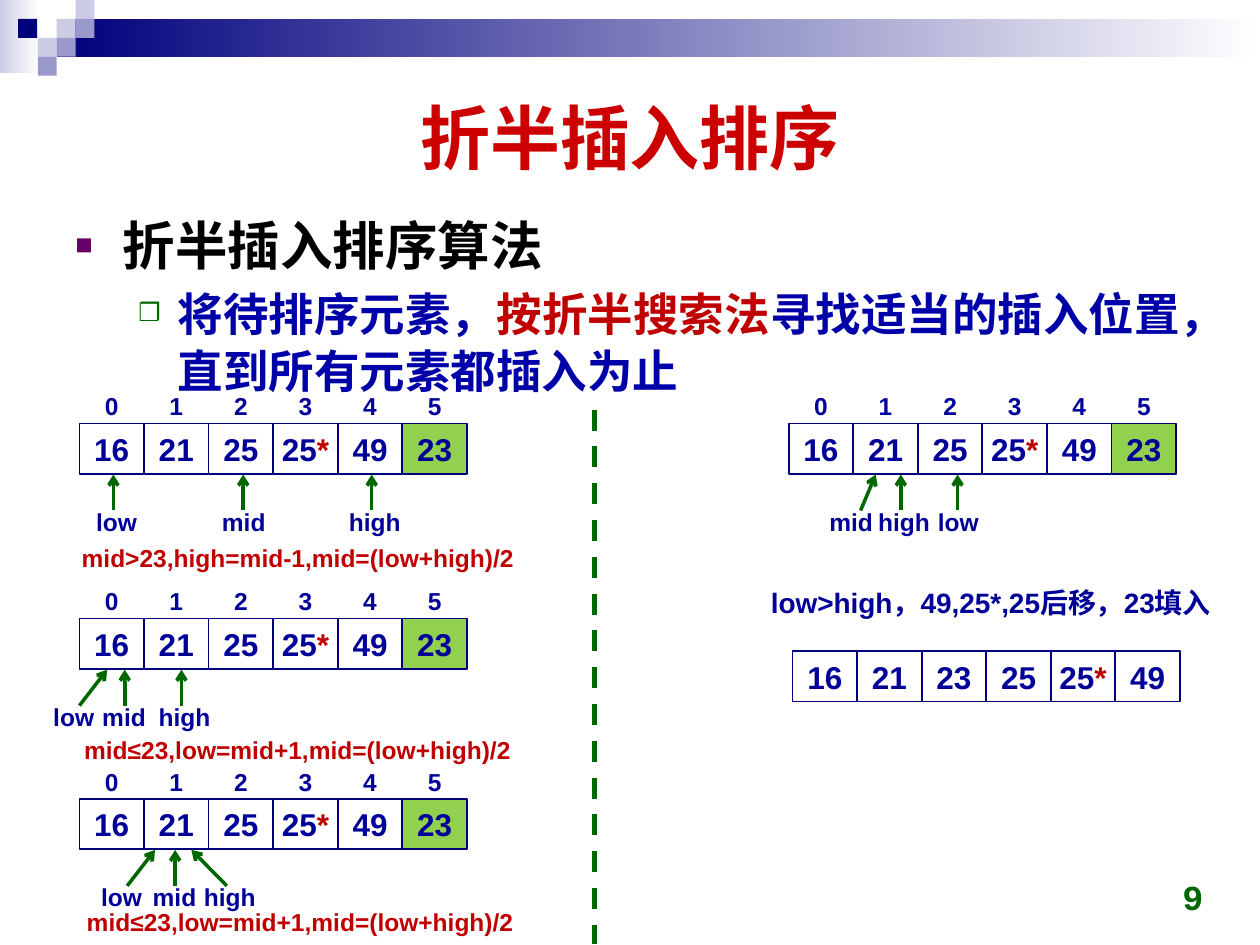
from pptx import Presentation
from pptx.dml.color import RGBColor
from pptx.enum.dml import MSO_LINE
from pptx.enum.shapes import MSO_CONNECTOR, MSO_SHAPE
from pptx.enum.text import MSO_ANCHOR, PP_ALIGN
from pptx.oxml.ns import qn
from pptx.util import Pt
from lxml.etree import SubElement

NAVY, LILAC, VIOLET, WHITE = "00007D", "CCCCE6", "9999CC", "FFFFFF"
INK, RED, GREEN, LIME = "000099", "C00000", "006600", "92D050"
CELL_WIDTH, CELL_HEIGHT = 36.9, 28.8
LABEL_WIDTHS = {"low": 38, "mid": 40, "high": 44}


def rgb(value):
    return RGBColor.from_string(value)


def write(paragraph, text, size=14, color=INK, font="Arial", align=PP_ALIGN.LEFT):
    paragraph.alignment = align
    run = paragraph.add_run()
    run.text = text
    run.font.size = Pt(size)
    run.font.bold = True
    run.font.name = font
    run.font.color.rgb = rgb(color)


def set_bullet(paragraph, symbol, color, margin, indent):
    properties = paragraph._p.get_or_add_pPr()
    properties.set("marL", str(Pt(margin)))
    properties.set("indent", str(Pt(-indent)))
    bullet_color = SubElement(properties, qn("a:buClr"))
    SubElement(bullet_color, qn("a:srgbClr"), val=color)
    SubElement(properties, qn("a:buSzPct"), val="55000")
    SubElement(properties, qn("a:buFont"), typeface="Arial")
    SubElement(properties, qn("a:buChar"), char=symbol)


class SlideBuilder:
    """Draws the parts of the sorting slide in one shared style."""

    def __init__(self, slide):
        self.slide = slide

    def box(self, left, top, width, height, fill=None, fade=None, border=None):
        box = self.slide.shapes.add_shape(
            MSO_SHAPE.RECTANGLE, Pt(left), Pt(top), Pt(width), Pt(height))
        box.shadow.inherit = False
        if fade:
            box.fill.gradient()
            box.fill.gradient_angle = 0
            for stop, color in zip(box.fill.gradient_stops, (fill, fade)):
                stop.color.rgb = rgb(color)
        elif fill:
            box.fill.solid()
            box.fill.fore_color.rgb = rgb(fill)
        else:
            box.fill.background()
        if border:
            box.line.color.rgb = rgb(border)
            box.line.width = Pt(1)
        else:
            box.line.fill.background()
        return box

    def frame(self, left, top, width, height, wrap=True, anchor=MSO_ANCHOR.TOP):
        frame = self.slide.shapes.add_textbox(
            Pt(left), Pt(top), Pt(width), Pt(height)).text_frame
        frame.word_wrap = wrap
        frame.vertical_anchor = anchor
        return frame

    def text(self, left, top, width, height, content, wrap=True,
             anchor=MSO_ANCHOR.TOP, **style):
        frame = self.frame(left, top, width, height, wrap, anchor)
        write(frame.paragraphs[0], content, **style)

    def line(self, start, end, width=2, arrow=False, dashed=False):
        line = self.slide.shapes.add_connector(
            MSO_CONNECTOR.STRAIGHT, *(Pt(value) for value in (*start, *end)))
        line.line.color.rgb = rgb(GREEN)
        line.line.width = Pt(width)
        if dashed:
            line.line.dash_style = MSO_LINE.DASH
        if arrow:
            SubElement(line.line._get_or_add_ln(), qn("a:tailEnd"), type="arrow")
        SubElement(line._element.spPr, qn("a:effectLst"))

    def array(self, left, top, values, pending=None):
        for index, value in enumerate(values):
            cell = self.box(left + index * CELL_WIDTH, top, CELL_WIDTH, CELL_HEIGHT,
                            fill=LIME if index == pending else None, border=NAVY)
            cell.text_frame.word_wrap = False
            paragraph = cell.text_frame.paragraphs[0]
            write(paragraph, value.rstrip("*"), size=18, align=PP_ALIGN.CENTER)
            if value.endswith("*"):
                write(paragraph, "*", size=18, color=RED, align=PP_ALIGN.CENTER)

    def trace(self, left, top, pointers):
        values = ["16", "21", "25", "25*", "49", "23"]
        self.array(left, top, values, pending=5)
        for index in range(len(values)):
            self.text(left + index * CELL_WIDTH, top - 22, CELL_WIDTH, 23, str(index),
                      wrap=False, align=PP_ALIGN.CENTER)
        for label, center, tail, head in pointers:
            width = LABEL_WIDTHS[label]
            self.text(center - width / 2, top + 44, width, 24.5, label,
                      wrap=False, align=PP_ALIGN.CENTER)
            self.line((tail, top + 49.7), (head, top + 29.2), arrow=True)

    def header(self):
        self.box(0, 0, 22.5, 42, LILAC, fade=WHITE)
        self.box(32.4, 10.8, 687.6, 21.6, NAVY, fade=WHITE)
        for left, top, color in [
            (32.4, 10.8, LILAC), (43.2, 0, LILAC), (43.2, 10.8, VIOLET),
            (21.6, 21.6, LILAC), (10.4, 10.8, NAVY), (32.4, 21.6, VIOLET),
            (21.6, 32.4, VIOLET),
        ]:
            self.box(left, top, 10.8, 10.8, color)

    def outline(self):
        frame = self.frame(36, 116.6, 648, 374.4)
        heading, detail = frame.paragraphs[0], frame.add_paragraph()
        detail.level = 1
        for paragraph, space in ((heading, 4.5), (detail, 3.9)):
            paragraph.line_spacing = 1.05
            paragraph.space_before = Pt(space)
        set_bullet(heading, "■", "660066", 27, 27)
        set_bullet(detail, "❒", GREEN, 58.5, 22.5)
        write(heading, "折半插入排序算法", size=30, color="000000")
        for content, color in [
            ("将待排序元素，", "0000A8"), ("按折半搜索法", RED),
            ("寻找适当的插入位置，直到所有元素都插入为止", "0000A8"),
        ]:
            write(detail, content, size=26, color=color)


def main():
    presentation = Presentation()
    presentation.slide_width, presentation.slide_height = Pt(720), Pt(540)
    builder = SlideBuilder(presentation.slides.add_slide(presentation.slide_layouts[6]))
    builder.header()
    builder.text(36, 36, 648, 83.5, "折半插入排序", anchor=MSO_ANCHOR.MIDDLE,
                 size=40, color="CC0000", align=PP_ALIGN.CENTER)
    builder.outline()
    builder.text(527, 491.8, 167.8, 36, "9", anchor=MSO_ANCHOR.BOTTOM, size=20,
                 color=GREEN, font="Courier New", align=PP_ALIGN.RIGHT)

    builder.array(452.9, 372.2, ["16", "21", "23", "25", "25*", "49"])
    builder.text(433.4, 331.2, 270, 26.6, "low>high，49,25*,25后移，23填入", size=16)

    for left, top, pointers in [
        (45.4, 242, [("low", 66.6, 64.8, 64.8), ("mid", 139.3, 139, 139),
                     ("high", 214.2, 212.4, 212.4)]),
        (45.4, 353.5, [("low", 42.1, 45.4, 61.2), ("mid", 70.9, 71.3, 71.3),
                       ("high", 105.5, 103.7, 103.7)]),
        (45.4, 456.5, [("low", 69.5, 72.7, 88.6), ("mid", 99.7, 100.1, 100.1),
                       ("high", 131.4, 129.6, 109.4)]),
        (450.7, 242, [("low", 547.6, 547.2, 547.2), ("mid", 486.4, 491.8, 500.4),
                      ("high", 516.6, 514.8, 514.8)]),
    ]:
        builder.trace(left, top, pointers)

    for left, top, step in [
        (39.6, 306.7, "mid>23,high=mid-1,mid=(low+high)/2"),
        (41, 416.2, "mid≤23,low=mid+1,mid=(low+high)/2"),
        (42.5, 514.8, "mid≤23,low=mid+1,mid=(low+high)/2"),
    ]:
        builder.text(left, top, 263, 24.5, step, color=RED)
    builder.line((339.8, 234), (339.8, 539.3), width=3, dashed=True)
    presentation.save("out.pptx")


if __name__ == "__main__":
    main()
